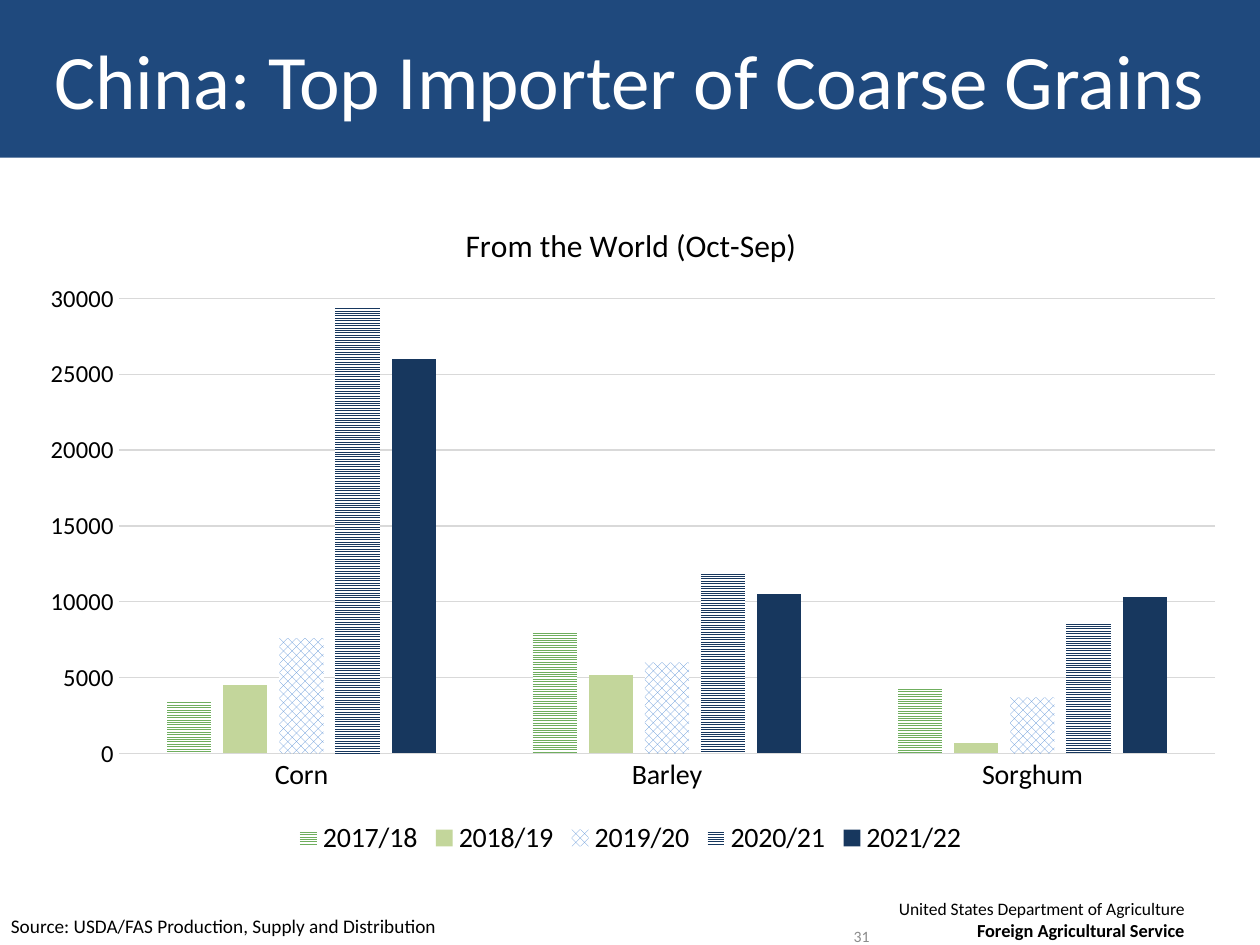
from dataclasses import dataclass
from typing import Optional

from lxml import etree
from pptx import Presentation
from pptx.chart.data import CategoryChartData
from pptx.dml.color import RGBColor
from pptx.enum import chart as ch, dml, text
from pptx.oxml import ns
from pptx.util import Cm, Pt

FONT = "Calibri"
BLACK = RGBColor(0x00, 0x00, 0x00)
WHITE = RGBColor(0xFF, 0xFF, 0xFF)
BANNER_BLUE = RGBColor(0x1F, 0x49, 0x7D)
GRID_GRAY = RGBColor(0xD9, 0xD9, 0xD9)
NUMBER_GRAY = RGBColor(0x8C, 0x8C, 0x8C)
GREEN = RGBColor(0x6F, 0xAE, 0x5E)
PALE_GREEN = RGBColor(0xC3, 0xD6, 0x9B)
SKY_BLUE = RGBColor(0x55, 0x8E, 0xD5)
NAVY = RGBColor(0x17, 0x37, 0x5E)

NARROW = dml.MSO_PATTERN.NARROW_HORIZONTAL
DOTTED = dml.MSO_PATTERN.PERCENT_50


@dataclass
class Season:
    name: str
    imports: tuple[int, ...]
    color: RGBColor
    pattern: Optional[dml.MSO_PATTERN] = None


@dataclass
class Line:
    wording: str
    size: float
    color: RGBColor = BLACK
    bold: bool = False


@dataclass
class Note:
    left: float
    top: float
    width: float
    height: float
    lines: list[Line]
    align: text.PP_ALIGN = text.PP_ALIGN.RIGHT
    anchor: text.MSO_ANCHOR = text.MSO_ANCHOR.TOP


GRAINS = ("Corn", "Barley", "Sorghum")
SEASONS = [
    Season("2017/18", (3500, 8100, 4400), GREEN, NARROW),
    Season("2018/19", (4500, 5200, 700), PALE_GREEN),
    Season("2019/20", (7600, 6000, 3700), SKY_BLUE, DOTTED),
    Season("2020/21", (29500, 12000, 8700), NAVY, NARROW),
    Season("2021/22", (26000, 10500, 10300), NAVY),
]
NOTES = [
    Note(17.58, 17.98, 6.55, 1.14, [
        Line("United States Department of Agriculture", 10),
        Line("Foreign Agricultural Service", 10.5, bold=True)]),
    Note(16.31, 18.31, 1.47, 1.14, [Line("31", 9, NUMBER_GRAY)],
         anchor=text.MSO_ANCHOR.MIDDLE),
    Note(-0.03, 18.31, 10.59, 0.74,
         [Line("Source: USDA/FAS Production, Supply and Distribution", 11)],
         align=text.PP_ALIGN.LEFT),
]


def style_font(font, size: float, color: RGBColor = BLACK, bold: bool = False) -> None:
    font.name, font.size, font.bold = FONT, Pt(size), bold
    font.color.rgb = color


def add_title(slide, wording: str) -> None:
    title = slide.shapes.title
    title.left, title.top, title.width, title.height = 0, 0, Cm(25.4), Cm(3.18)
    title.fill.solid()
    title.fill.fore_color.rgb = BANNER_BLUE
    frame = title.text_frame
    frame.text = wording
    frame.auto_size = text.MSO_AUTO_SIZE.NONE
    frame.vertical_anchor = text.MSO_ANCHOR.MIDDLE
    frame.paragraphs[0].alignment = text.PP_ALIGN.CENTER
    style_font(frame.paragraphs[0].font, 44, WHITE)


def add_note(slide, note: Note) -> None:
    box = slide.shapes.add_textbox(
        Cm(note.left), Cm(note.top), Cm(note.width), Cm(note.height))
    frame = box.text_frame
    frame.word_wrap = True
    frame.vertical_anchor = note.anchor
    for index, line in enumerate(note.lines):
        paragraph = frame.add_paragraph() if index else frame.paragraphs[0]
        paragraph.text = line.wording
        paragraph.alignment = note.align
        style_font(paragraph.font, line.size, line.color, line.bold)


def place(part, **fractions: float) -> None:
    """Fix a chart part's position, in fractions of the chart's size."""
    for old in part.findall(ns.qn("c:layout")):
        part.remove(old)
    layout = etree.Element(ns.qn("c:layout"))
    manual = etree.SubElement(layout, ns.qn("c:manualLayout"))
    if "w" in fractions:
        etree.SubElement(manual, ns.qn("c:layoutTarget"), val="inner")
    for mode in ("xMode", "yMode"):
        etree.SubElement(manual, ns.qn(f"c:{mode}"), val="edge")
    for key, fraction in fractions.items():
        etree.SubElement(manual, ns.qn(f"c:{key}"), val=str(fraction))
    heading = part.find(ns.qn("c:tx"))
    part.insert(0 if heading is None else 1, layout)


def style_axes(chart) -> None:
    for axis, size in ((chart.category_axis, 16), (chart.value_axis, 14)):
        axis.major_tick_mark = axis.minor_tick_mark = ch.XL_TICK_MARK.NONE
        style_font(axis.tick_labels.font, size)
    grid = chart.value_axis.major_gridlines.format.line
    for line in (chart.category_axis.format.line, grid):
        line.color.rgb = GRID_GRAY
        line.width = Pt(0.75)
    amounts = chart.value_axis
    amounts.format.line.fill.background()
    amounts.minimum_scale, amounts.maximum_scale = 0, 30000
    amounts.major_unit = 5000


def add_import_chart(slide) -> None:
    data = CategoryChartData(number_format="0")
    data.categories = GRAINS
    for season in SEASONS:
        data.add_series(season.name, season.imports)
    chart = slide.shapes.add_chart(
        ch.XL_CHART_TYPE.COLUMN_CLUSTERED,
        Cm(0.43), Cm(3.86), Cm(24.56), Cm(13.49), data).chart
    style_font(chart.font, 10)

    chart.has_title = True
    heading = chart.chart_title.text_frame
    heading.text = "From the World (Oct-Sep)"
    style_font(heading.paragraphs[0].font, 18)
    chart.chart_title.include_in_layout = False

    chart.has_legend = True
    chart.legend.position = ch.XL_LEGEND_POSITION.BOTTOM
    chart.legend.include_in_layout = False
    style_font(chart.legend.font, 16)

    style_axes(chart)
    plot = chart.plots[0]
    plot.gap_width, plot.overlap = 219, -27
    plot.vary_by_categories = False
    for season, series in zip(SEASONS, plot.series):
        series.invert_if_negative = False
        fill = series.format.fill
        if season.pattern is None:
            fill.solid()
        else:
            fill.patterned()
            fill.pattern = season.pattern
            fill.back_color.rgb = WHITE
        fill.fore_color.rgb = season.color

    root = chart.element
    place(root.find(".//" + ns.qn("c:title")), x=0.36, y=0.04)
    place(root.find(".//" + ns.qn("c:plotArea")), x=0.08, y=0.16, w=0.9, h=0.68)


def main() -> None:
    deck = Presentation()
    deck.slide_width, deck.slide_height = Cm(25.4), Cm(19.05)
    slide = deck.slides.add_slide(deck.slide_layouts[5])
    add_title(slide, "China: Top Importer of Coarse Grains")
    add_import_chart(slide)
    for note in NOTES:
        add_note(slide, note)
    deck.save("out.pptx")


if __name__ == "__main__":
    main()
